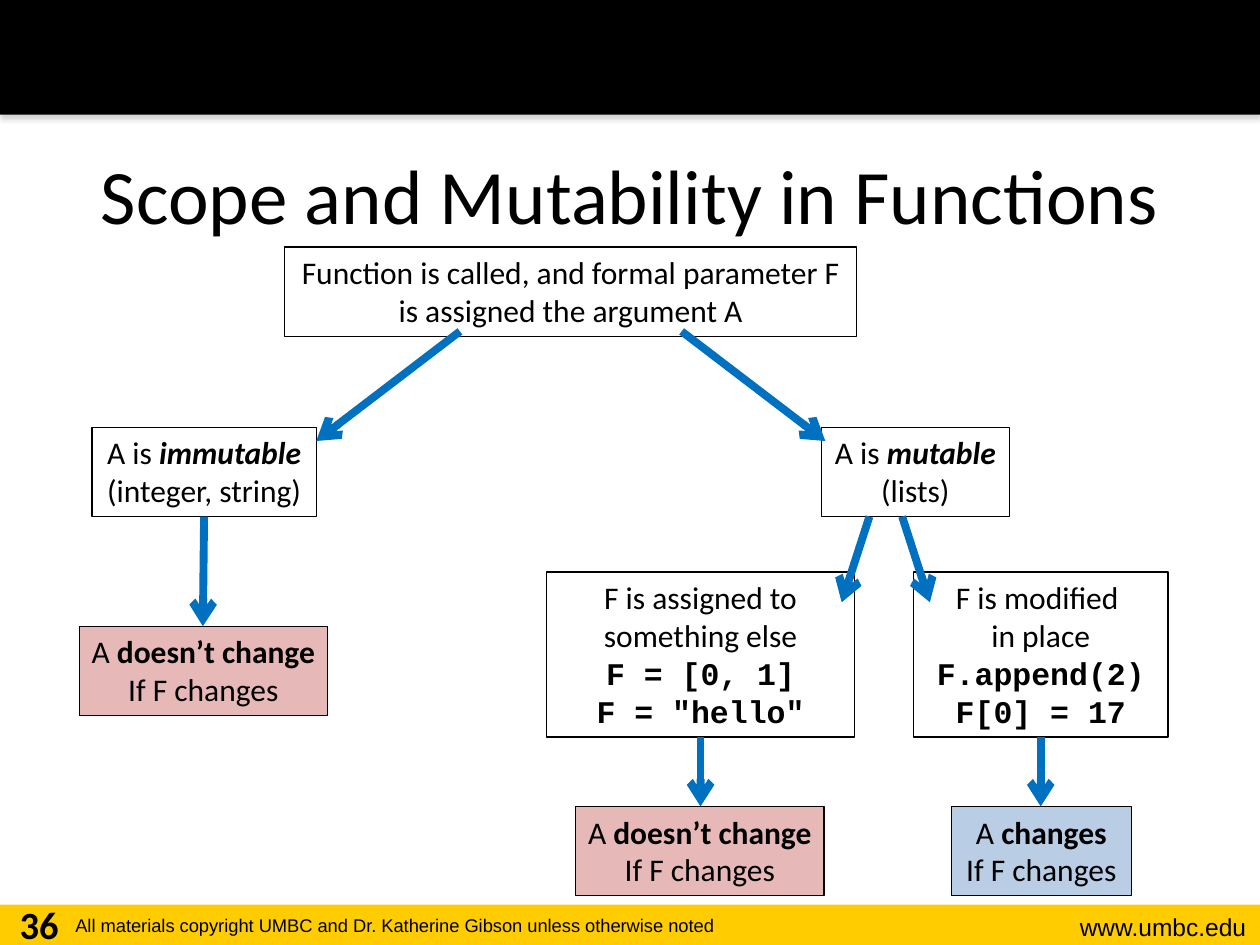
from typing import NamedTuple

from lxml.etree import SubElement
from pptx import Presentation
from pptx.dml.color import RGBColor
from pptx.enum.shapes import MSO_CONNECTOR as Conn, MSO_SHAPE as Kind
from pptx.enum.text import MSO_ANCHOR as Anchor, PP_ALIGN as Align
from pptx.oxml import parse_xml
from pptx.oxml.ns import qn
from pptx.util import Inches, Pt

BLACK, BLUE, GOLD = "000000", "0070C0", "FFCC00"
PINK, SKY = "E6B9B8", "B9CDE5"
BODY, CODE = "Calibri", "Courier New"


class Line(NamedTuple):
    text: str
    strong: str = ""  # bold words that end the line
    slant: bool = False
    font: str = BODY


class Box(NamedTuple):
    left: float
    top: float
    width: float
    height: float
    lines: list[Line]
    fill: str = ""
    wrap: bool = False


class Label(NamedTuple):
    left: float
    top: float
    width: float
    height: float
    text: str
    size: float
    font: str
    align: Align
    bold: bool = False
    anchor: Anchor = Anchor.TOP


class Arrow(NamedTuple):
    x1: float
    y1: float
    x2: float
    y2: float


def color(code: str) -> RGBColor:
    return RGBColor.from_string(code)


def style(run, size: float, font: str, bold: bool = False, slant: bool = False) -> None:
    face = run.font
    face.size, face.name = Pt(size), font
    face.bold, face.italic = bold, slant
    face.color.rgb = color(BLACK)


def draw_rect(slide, left: float, top: float, width: float, height: float, fill: str):
    rect = slide.shapes.add_shape(
        Kind.RECTANGLE, Inches(left), Inches(top), Inches(width), Inches(height))
    rect.shadow.inherit = False
    rect.line.fill.background()
    if fill:
        rect.fill.solid()
        rect.fill.fore_color.rgb = color(fill)
    else:
        rect.fill.background()
    return rect


def draw_label(slide, label: Label) -> None:
    area = slide.shapes.add_textbox(
        Inches(label.left), Inches(label.top), Inches(label.width), Inches(label.height))
    frame = area.text_frame
    frame.word_wrap = True
    frame.vertical_anchor = label.anchor
    frame.text = label.text
    para = frame.paragraphs[0]
    para.alignment = label.align
    style(para.runs[0], label.size, label.font, label.bold)


def draw_box(slide, box: Box) -> None:
    rect = draw_rect(slide, box.left, box.top, box.width, box.height, box.fill)
    rect.line.color.rgb = color(BLACK)
    rect.line.width = Pt(0.75)
    frame = rect.text_frame
    frame.word_wrap = box.wrap
    frame.vertical_anchor = Anchor.TOP
    frame.text = "\n".join(line.text for line in box.lines)
    for para, line in zip(frame.paragraphs, box.lines):
        para.alignment = Align.CENTER
        for run in para.runs:
            style(run, 18, line.font, line.font == CODE)
        if line.strong:
            run = para.add_run()
            run.text = line.strong
            style(run, 18, line.font, True, line.slant)


def draw_arrow(slide, arrow: Arrow) -> None:
    link = slide.shapes.add_connector(Conn.STRAIGHT, *map(Inches, arrow))
    link.line.color.rgb = color(BLUE)
    link.line.width = Pt(4.5)
    SubElement(link.line._get_or_add_ln(), qn("a:tailEnd"), type="arrow")
    SubElement(link._element.spPr, qn("a:effectLst"))


def add_shadow(shape) -> None:
    props = shape._element.spPr
    effects = props.find(qn("a:effectLst"))
    effects.append(parse_xml(
        '<a:outerShdw xmlns:a="http://schemas.openxmlformats.org/drawingml/2006/main"'
        f' blurRad="{Pt(3.1)}" dist="{Pt(1.8)}" dir="5400000" rotWithShape="0">'
        '<a:srgbClr val="808080"><a:alpha val="35000"/></a:srgbClr></a:outerShdw>'))


SAME = [Line("A ", "doesn’t change"), Line("If F changes")]

LABELS = [
    Label(8, 7.19, 1.99, 0.34, "www.umbc.edu", 14, "Arial", Align.RIGHT),
    Label(0.5, 7.21, 6.56, 0.29,
          "All materials copyright UMBC and Dr. Katherine Gibson unless otherwise noted",
          10.5, "Arial", Align.LEFT),
    Label(0.5, 0.91, 9, 1.25, "Scope and Mutability in Functions", 44, BODY,
          Align.CENTER, anchor=Anchor.MIDDLE),
    Label(0, 7.1, 0.62, 0.4, "36", 22, BODY, Align.CENTER, bold=True),
]

BOXES = [
    Box(2.26, 1.96, 4.54, 0.71, [
        Line("Function is called, and formal parameter F"),
        Line("is assigned the argument A")]),
    Box(0.73, 3.39, 1.78, 0.71, [
        Line("A is ", "immutable", True), Line("(integer, string)")]),
    Box(6.52, 3.39, 1.49, 0.71, [
        Line("A is ", "mutable", True), Line("(lists)")]),
    Box(0.63, 4.97, 1.97, 0.71, SAME, PINK),
    Box(4.34, 4.54, 2.44, 1.31, [
        Line("F is assigned to something else"),
        Line("F = [0, 1]", font=CODE), Line('F = "hello"', font=CODE)], wrap=True),
    Box(7.25, 4.54, 2.02, 1.31, [
        Line("F is modified \vin place"),
        Line("F.append(2)", font=CODE), Line("F[0] = 17", font=CODE)], wrap=True),
    Box(4.57, 6.4, 1.97, 0.71, SAME, PINK),
    Box(7.55, 6.4, 1.43, 0.71, [Line("A ", "changes"), Line("If F changes")], SKY),
]

ARROWS = [
    Arrow(3.65, 2.63, 2.51, 3.5),
    Arrow(5.41, 2.63, 6.55, 3.5),
    Arrow(1.62, 4.1, 1.61, 4.97),
    Arrow(6.9, 4.1, 6.68, 4.78),
    Arrow(5.56, 5.85, 5.56, 6.4),
    Arrow(7.16, 4.1, 7.38, 4.78),
    Arrow(8.26, 5.85, 8.26, 6.4),
]


def main() -> None:
    deck = Presentation()
    deck.slide_width, deck.slide_height = Inches(10), Inches(7.5)
    slide = deck.slides.add_slide(deck.slide_layouts[6])

    # Footer and header bars
    draw_rect(slide, 0, 7.18, 10, 0.32, GOLD)
    add_shadow(draw_rect(slide, 0, 0, 10, 0.91, BLACK))

    # Title and footer text
    for label in LABELS:
        draw_label(slide, label)

    # Decision tree
    for box in BOXES:
        draw_box(slide, box)
    for arrow in ARROWS:
        draw_arrow(slide, arrow)

    deck.save("out.pptx")


if __name__ == "__main__":
    main()
